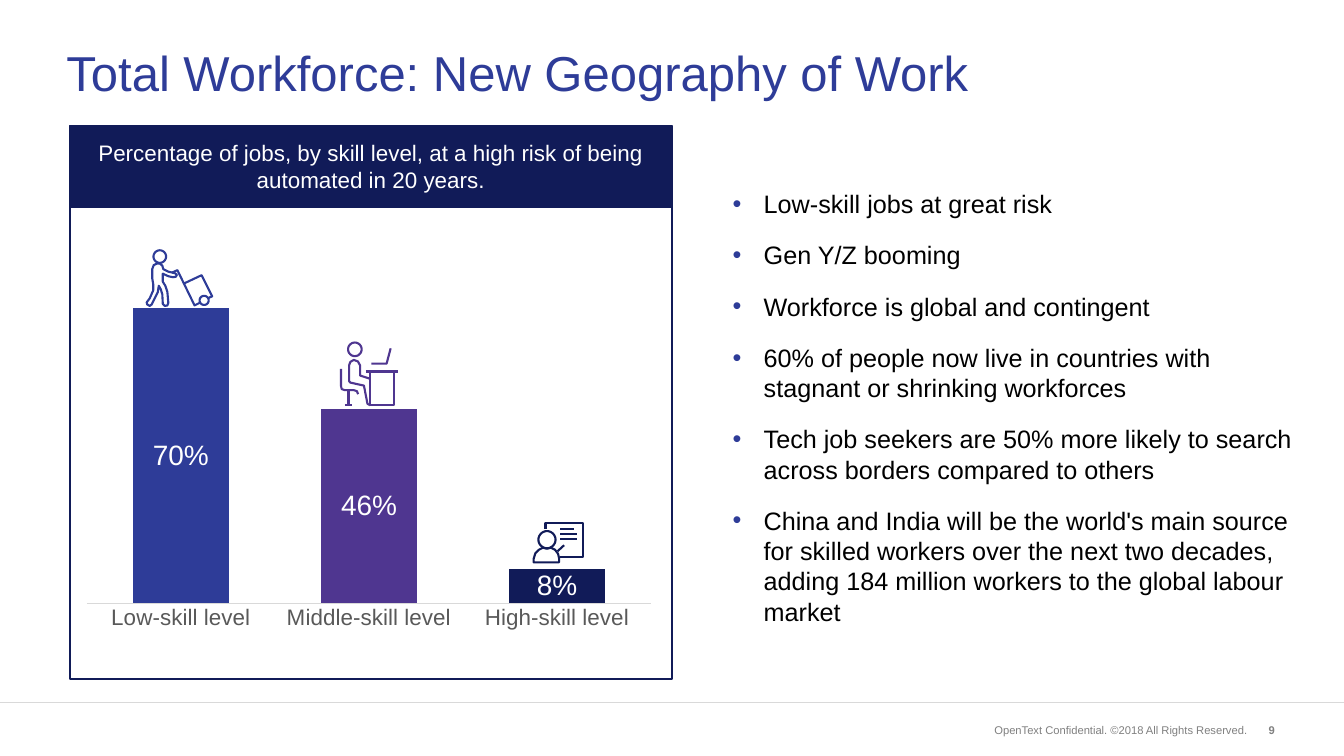
import math
import pptx
import pptx.chart.data
import pptx.dml.color
import pptx.enum.chart
import pptx.enum.shapes
import pptx.enum.text
import pptx.oxml
import pptx.oxml.ns
import pptx.util

Cm = pptx.util.Cm
Pt = pptx.util.Pt
ALIGN = pptx.enum.text.PP_ALIGN
MIDDLE = pptx.enum.text.MSO_ANCHOR.MIDDLE
RECT = pptx.enum.shapes.MSO_SHAPE.RECTANGLE
BLUE, PURPLE, NAVY = "2E3C98", "4F3690", "111B58"
WHITE, BLACK, PALE = "FFFFFF", "000000", "D9D9D9"
SKILLS = {"Low-skill level": 0.7, "Middle-skill level": 0.46, "High-skill level": 0.08}
POINTS = [
    "Low-skill jobs at great risk",
    "Gen Y/Z booming",
    "Workforce is global and contingent",
    "60% of people now live in countries with stagnant or shrinking workforces",
    "Tech job seekers are 50% more likely to search across borders compared to others",
    "China and India will be the world's main source for skilled workers over the next "
    "two decades, adding 184 million workers to the global labour market",
]


def tint(code):
    return pptx.dml.color.RGBColor.from_string(code)


def apply(target, values):
    for name, value in values.items():
        setattr(target, name, value)


def style(font, size, code, bold=False):
    apply(font, {"name": "Arial", "size": Pt(size), "bold": bold})
    font.color.rgb = tint(code)


def stroke(line, code, width):
    line.color.rgb = tint(code)
    line.width = Pt(width)


def place(box):
    return [Cm(value) for value in box]


def ring(x, y, r):
    turns = [math.tau * step / 32 for step in range(33)]
    return [(x + r * math.cos(turn), y + r * math.sin(turn)) for turn in turns]


def write(frame, lines, size, code, bold=False, **form):
    apply(frame, {"word_wrap": True, "vertical_anchor": MIDDLE})
    for index, line in enumerate(lines):
        par = frame.add_paragraph() if index else frame.paragraphs[0]
        apply(par, form)
        run = par.add_run()
        run.text = line
        style(run.font, size, code, bold)


def label(slide, box, text, size, code, bold=False, **form):
    frame = slide.shapes.add_textbox(*place(box)).text_frame
    write(frame, [text], size, code, bold, **form)


def block(slide, box, fill=None):
    shape = slide.shapes.add_shape(RECT, *place(box))
    shape.shadow.inherit = False
    stroke(shape.line, NAVY, 3)
    if fill:
        shape.fill.solid()
        shape.fill.fore_color.rgb = tint(fill)
    else:
        shape.fill.background()
    return shape


def icon(slide, left, top, code, paths):
    scaled = [[(x * 10, y * 10) for x, y in path] for path in paths]
    pen = slide.shapes.build_freeform(*scaled[0][0], scale=Cm(0.00254))
    for index, path in enumerate(scaled):
        if index:
            pen.move_to(*path[0])
        pen.add_line_segments(path[1:], close=path[0] == path[-1])
    shape = pen.convert_to_shape(Cm(left), Cm(top))
    shape.shadow.inherit = False
    shape.fill.background()
    stroke(shape.line, code, 3)


def porter(slide, left, top):
    body = [(16, 32), (22, 29), (28, 29), (33, 33), (35, 40), (45, 45), (58, 48),
            (62, 51), (60, 55), (54, 56), (45, 54), (34, 49), (34, 65), (39, 73),
            (43, 85), (45, 107), (43, 112), (38, 113), (34, 109), (33, 90), (30, 80),
            (26, 73), (24, 86), (12, 110), (8, 113), (3, 110), (2, 106), (8, 98),
            (15, 82), (15, 70), (13, 58), (13, 40), (16, 32)]
    cart = [(52, 47), (63, 42), (97, 112), (107, 107)]
    load = [(77, 68), (111, 52), (132, 94), (125, 97)]
    icon(slide, left, top, BLUE, [ring(28, 15, 12.5), body, cart, load, ring(116, 102, 9)])


def clerk(slide, left, top):
    chair = [(2.5, 55), (2.5, 89), (4, 95), (10, 97), (28, 97), (34, 99), (36.5, 105)]
    body = [(59, 74), (40.5, 68), (40.5, 48), (36, 40), (28, 37), (21, 41), (18.5, 48),
            (18.5, 79), (21, 82), (48, 88), (55, 124), (60, 127)]
    desk = [(59.5, 60), (108.5, 60), (108.5, 127), (59.5, 127), (59.5, 60)]
    icon(slide, left, top, PURPLE, [
        ring(30, 16, 13.5), chair, [(17.5, 97), (17.5, 127)], [(10, 127), (25, 127)],
        body, desk, [(52, 60), (116, 60)], [(63, 44.5), (93, 44.5), (101, 14)]])


def coach(slide, left, top):
    body = [(1.5, 80), (1.5, 73), (5, 62), (12, 55), (20, 51), (28, 53), (36, 51),
            (44, 55), (50, 63), (52, 72), (52, 80), (1.5, 80)]
    board = [(25, 14), (25, 2), (100, 2), (100, 70), (53, 70)]
    notes = [[(54, y), (end, y)] for y, end in ((14, 82), (24, 88), (34.5, 88))]
    icon(slide, left, top, NAVY,
         [ring(28, 35, 17), body, board, [(49, 58), (62, 46)], *notes])


def graph(slide, box):
    kinds = pptx.enum.chart
    data = pptx.chart.data.CategoryChartData(number_format="0%")
    data.categories = list(SKILLS)
    data.add_series("Series 1", list(SKILLS.values()))
    chart = slide.shapes.add_chart(
        kinds.XL_CHART_TYPE.COLUMN_CLUSTERED, *place(box), data).chart
    apply(chart, {"has_legend": False, "has_title": False})
    style(chart.font, 10, BLACK)
    apply(chart.value_axis, {"visible": False, "has_major_gridlines": False,
                             "minimum_scale": 0, "maximum_scale": 0.8})
    axis = chart.category_axis
    apply(axis, {"major_tick_mark": kinds.XL_TICK_MARK.NONE, "has_major_gridlines": False})
    style(axis.tick_labels.font, 32, "595959")
    stroke(axis.format.line, PALE, 0.75)
    plot = chart.plots[0]
    apply(plot, {"gap_width": 97, "overlap": -27, "vary_by_categories": False})
    bars = plot.series[0]
    for index, code in enumerate((BLUE, PURPLE, NAVY)):
        fill = bars.points[index].format.fill
        fill.solid()
        fill.fore_color.rgb = tint(code)
    tags = bars.data_labels
    apply(tags, {"show_value": True, "number_format": "0%", "number_format_is_linked": False,
                 "position": kinds.XL_LABEL_POSITION.CENTER})
    style(tags.font, 40, WHITE)
    area = plot._element.getparent()
    for old in area.findall(pptx.oxml.ns.qn("c:layout")):
        area.remove(old)
    rules = {"layoutTarget": "inner", "xMode": "edge", "yMode": "edge",
             "x": 0.02, "y": 0.02, "w": 0.96, "h": 0.89}
    inner = "".join(f'<c:{name} val="{value}"/>' for name, value in rules.items())
    area.insert(0, pptx.oxml.parse_xml(
        f'<c:layout {pptx.oxml.ns.nsdecls("c")}><c:manualLayout>{inner}'
        "</c:manualLayout></c:layout>"))


def panel(slide, box):
    left, top, width, height = box
    block(slide, box)
    head = block(slide, (left, top, width, 4.06), NAVY)
    write(head.text_frame,
          ["Percentage of jobs, by skill level, at a high risk of being automated in 20 years."],
          32, WHITE, alignment=ALIGN.CENTER)
    graph(slide, (left + 0.27, top + 6.68, width - 0.73, 19.08))
    porter(slide, left + 3.83, top + 6.2)
    clerk(slide, left + 13.61, top + 10.85)
    coach(slide, left + 23.34, top + 19.96)


def bullets(slide, box):
    frame = slide.shapes.add_textbox(*place(box)).text_frame
    sides = ("left", "right", "top", "bottom")
    apply(frame, {f"margin_{side}": Cm(0.51) for side in sides})
    write(frame, POINTS, 36, BLACK)
    space = pptx.oxml.ns.nsdecls("a")
    for index, par in enumerate(frame.paragraphs):
        props = par._p.get_or_add_pPr()
        props.set("marL", str(Cm(1.57)))
        props.set("indent", str(-Cm(1.57)))
        for part in (f'<a:buClr {space}><a:srgbClr val="{BLUE}"/></a:buClr>',
                     f'<a:buFont {space} typeface="Arial"/>',
                     f'<a:buChar {space} char="•"/>'):
            props.append(pptx.oxml.parse_xml(part))
        par.space_before = Pt(30 if index else 0)


def footer(slide, box):
    left, top, width, height = box
    rule = slide.shapes.add_connector(
        pptx.enum.shapes.MSO_CONNECTOR.STRAIGHT, *place((left, top, left + width, top)))
    stroke(rule.line, PALE, 1)
    rule._element.spPr.append(
        pptx.oxml.parse_xml(f'<a:effectLst {pptx.oxml.ns.nsdecls("a")}/>'))
    label(slide, (left + 48.06, top + 0.9, 15.04, 0.94),
          "OpenText Confidential. ©2018 All Rights Reserved.", 16, "808080",
          alignment=ALIGN.RIGHT)
    label(slide, (left + 62.69, top + 0.9, 1.8, 0.94), "9", 16, "808080", True,
          alignment=ALIGN.RIGHT)


def main():
    deck = pptx.Presentation()
    apply(deck, {"slide_width": Cm(67.72), "slide_height": Cm(38.1)})
    slide = deck.slides.add_slide(deck.slide_layouts[6])
    footer(slide, (0, 35.41, 67.72, 2.69))
    panel(slide, (3.51, 6.35, 30.35, 27.89))
    label(slide, (3.1, 0.97, 61.16, 5.41), "Total Workforce: New Geography of Work",
          70, BLUE, line_spacing=Pt(80))
    bullets(slide, (36.4, 7.52, 29.82, 26.01))
    deck.save("out.pptx")


if __name__ == "__main__":
    main()
